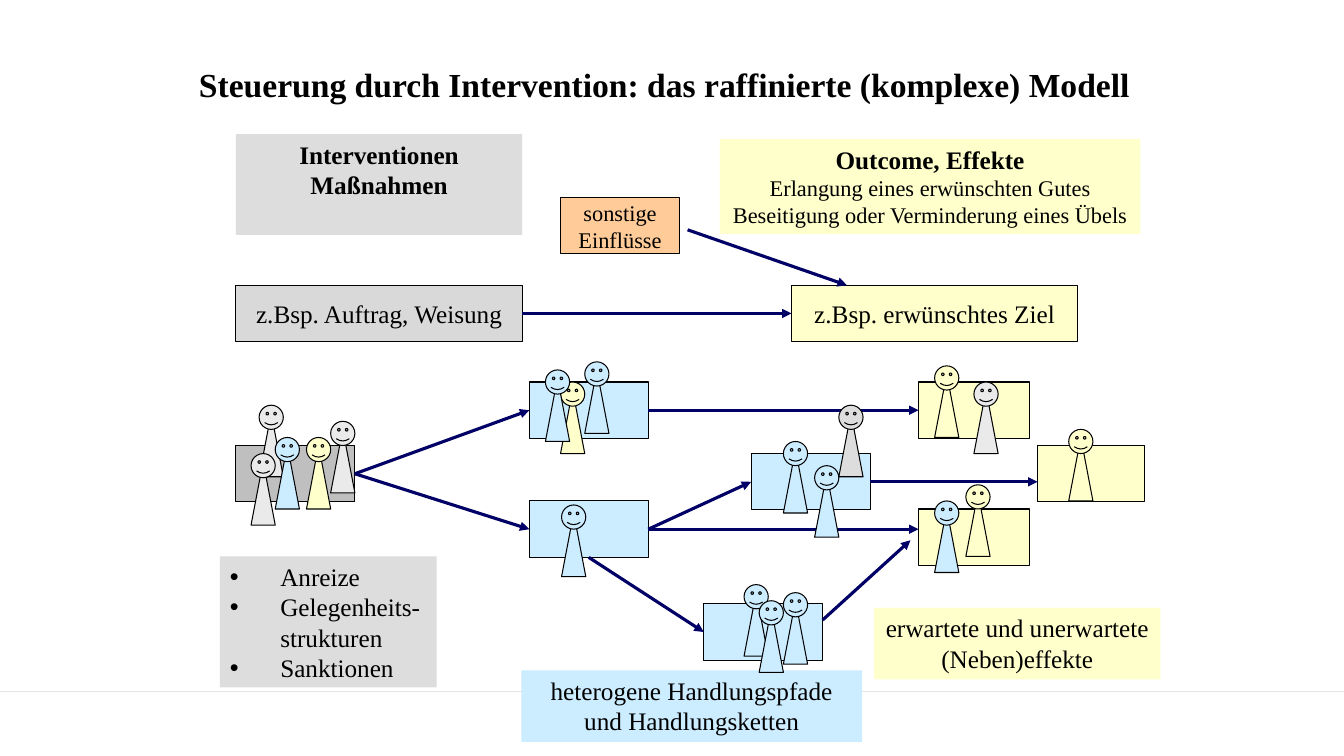
from lxml.etree import SubElement
from pptx import Presentation
from pptx.dml.color import RGBColor
from pptx.enum.shapes import MSO_CONNECTOR, MSO_SHAPE
from pptx.enum.text import MSO_ANCHOR, MSO_AUTO_SIZE, PP_ALIGN
from pptx.oxml.ns import qn
from pptx.util import Inches, Pt

COLORS = {
    "black": "000000", "navy": "000066", "rule": "E4E5EA",
    "label": "DDDDDD", "order": "D9D9D9", "start": "BFBFBF", "pale": "EAEAEA",
    "yellow": "FFFFCC", "blue": "CCECFF", "orange": "FFCC99",
}
FONT = "Times New Roman"
LEFT, BOTTOM, RIGHT = 1, 2, 3
BOX_H = 0.56
STEP_W = 1.18


def color(name):
    return RGBColor.from_string(COLORS[name])


class SlideBuilder:
    def __init__(self, s):
        self.s = s

    def place(self, sp, x, y, w, h):
        sp.left, sp.top, sp.width, sp.height = (Inches(v) for v in (x, y, w, h))

    def fill_text(self, tf, paragraphs, size=18, bold=False, align=PP_ALIGN.CENTER):
        tf.auto_size = MSO_AUTO_SIZE.NONE
        tf.text = "\n".join(paragraphs)
        for p in tf.paragraphs:
            p.alignment = align
            p.space_before = Pt(0)
            for r in p.runs:
                self.style(r, size, bold)

    def style(self, r, size, bold):
        r.font.name = FONT
        r.font.size = Pt(size)
        r.font.bold = bold
        r.font.color.rgb = color("black")

    def title(self, text, x, y, w, h):
        sp = self.s.shapes.title
        self.place(sp, x, y, w, h)
        self.fill_text(sp.text_frame, [text], 24, True)
        sp.text_frame.vertical_anchor = MSO_ANCHOR.MIDDLE

    def bullets(self, items, x, y, w, h, fill):
        sp = self.s.placeholders[1]
        self.place(sp, x, y, w, h)
        sp.fill.solid()
        sp.fill.fore_color.rgb = color(fill)
        tf = sp.text_frame
        self.fill_text(tf, items, align=PP_ALIGN.LEFT)
        tf.word_wrap = False
        for p in tf.paragraphs:
            pPr = p._p.get_or_add_pPr()
            pPr.set("marL", str(Inches(0.5)))
            pPr.set("indent", str(Inches(-0.5)))
            SubElement(pPr, qn("a:buChar")).set("char", "•")

    def shape(self, kind, x, y, w, h, fill, outline=True):
        sp = self.s.shapes.add_shape(kind, Inches(x), Inches(y), Inches(w), Inches(h))
        sp.shadow.inherit = False
        sp.fill.solid()
        sp.fill.fore_color.rgb = color(fill)
        if outline:
            sp.line.color.rgb = color("black")
            sp.line.width = Pt(0.75)
        else:
            sp.line.fill.background()
        return sp

    def box(self, x, y, w, fill, text=None, size=18):
        sp = self.shape(MSO_SHAPE.RECTANGLE, x, y, w, BOX_H, fill)
        if text:
            self.fill_text(sp.text_frame, [text], size)
            sp.text_frame.word_wrap = False
            sp.text_frame.vertical_anchor = MSO_ANCHOR.MIDDLE
        return sp

    def caption(self, text, x, y, w, h, fill, bold=False, details=None):
        sp = self.shape(MSO_SHAPE.RECTANGLE, x, y, w, h, fill, outline=False)
        tf = sp.text_frame
        self.fill_text(tf, [text, details] if details else [text], bold=bold)
        tf.word_wrap = True
        tf.vertical_anchor = MSO_ANCHOR.TOP
        if details:
            for r in tf.paragraphs[1].runs:
                self.style(r, 16, False)

    def line(self, start, end, name, width):
        cxn = self.s.shapes.add_connector(
            MSO_CONNECTOR.STRAIGHT, *(Inches(v) for v in (*start, *end)))
        cxn.line.color.rgb = color(name)
        cxn.line.width = Pt(width)
        SubElement(cxn._element.spPr, qn("a:effectLst"))
        return cxn

    def arrow(self, start, end):
        start_joined, end_joined = (hasattr(v[0], "shape_id") for v in (start, end))
        cxn = self.line((0, 0) if start_joined else start,
                        (0, 0) if end_joined else end, "navy", 2.25)
        ln = cxn._element.spPr.find(qn("a:ln"))
        SubElement(ln, qn("a:tailEnd")).set("type", "triangle")
        if start_joined:
            cxn.begin_connect(*start)
        if end_joined:
            cxn.end_connect(*end)

    def person(self, x, y, fill):
        self.shape(MSO_SHAPE.ISOSCELES_TRIANGLE, x, y + 0.08, 0.24, 0.63, fill)
        self.shape(MSO_SHAPE.SMILEY_FACE, x, y, 0.24, 0.24, fill)


def main():
    prs = Presentation()
    prs.slide_width, prs.slide_height = Inches(13.33), Inches(7.5)
    b = SlideBuilder(prs.slides.add_slide(prs.slide_layouts[1]))

    b.line((0, 6.86), (13.33, 6.86), "rule", 0.5)
    b.title("Steuerung durch Intervention: das raffinierte (komplexe) Modell",
            1.67, 0.21, 9.84, 1.25)
    b.bullets(["Anreize", "Gelegenheits-\vstrukturen", "Sanktionen"],
              2.18, 5.52, 2.15, 1.3, "label")

    b.caption("Interventionen\vMaßnahmen", 2.34, 1.33, 2.84, 1, "label", bold=True)
    b.caption("Outcome, Effekte", 7.14, 1.38, 4.17, 0.94, "yellow", bold=True,
              details="Erlangung eines erwünschten Gutes\v"
                      "Beseitigung oder Verminderung eines Übels")
    b.caption("erwartete und unerwartete (Neben)effekte", 8.67, 6.03, 2.84, 0.71, "yellow")
    b.caption("heterogene Handlungspfade und Handlungsketten", 5.17, 6.65, 3.38, 0.71, "blue")

    order = b.box(2.34, 2.83, 2.84, "order", "z.Bsp. Auftrag, Weisung")
    goal = b.box(7.85, 2.83, 2.84, "yellow", "z.Bsp. erwünschtes Ziel")
    b.box(5.56, 1.96, STEP_W, "orange", "sonstige\vEinflüsse", 16)

    start = b.box(2.34, 4.42, STEP_W, "start")
    upper = b.box(5.25, 3.79, STEP_W, "blue")
    lower = b.box(5.25, 4.97, STEP_W, "blue")
    middle = b.box(7.45, 4.5, STEP_W, "blue")
    bottom = b.box(6.98, 5.99, STEP_W, "blue")
    effect = b.box(9.11, 3.79, 1.1, "yellow")
    b.box(9.11, 5.05, 1.1, "yellow")
    b.box(10.29, 4.42, 1.06, "yellow")

    for tail, head in [
        ((order, RIGHT), (goal, LEFT)),
        ((6.82, 2.28), (8.4, 2.83)),
        ((start, RIGHT), (upper, LEFT)),
        ((start, RIGHT), (lower, LEFT)),
        ((upper, RIGHT), (effect, LEFT)),
        ((lower, RIGHT), (middle, LEFT)),
        ((lower, RIGHT), (9.11, 5.25)),
        ((lower, BOTTOM), (bottom, LEFT)),
        ((middle, RIGHT), (10.29, 4.78)),
        ((8.16, 6.15), (9.03, 5.36)),
    ]:
        b.arrow(tail, head)

    people = [
        ("pale", [(2.57, 4.02), (2.49, 4.5), (3.28, 4.18)]),
        ("yellow", [(3.04, 4.34), (5.56, 3.79)]),
        ("label", [(8.32, 4.02)]),
        ("yellow", [(10.6, 4.26), (9.58, 4.81), (9.27, 3.63)]),
        ("pale", [(9.66, 3.79)]),
        ("blue", [(2.73, 4.34), (9.27, 4.97), (7.38, 5.8), (7.77, 4.38), (8.08, 4.62),
                  (7.77, 5.88), (7.53, 5.96), (5.8, 3.59), (5.41, 3.67), (5.57, 5.01)]),
    ]
    for fill, spots in people:
        for x, y in spots:
            b.person(x, y, fill)

    prs.save("out.pptx")


if __name__ == "__main__":
    main()
